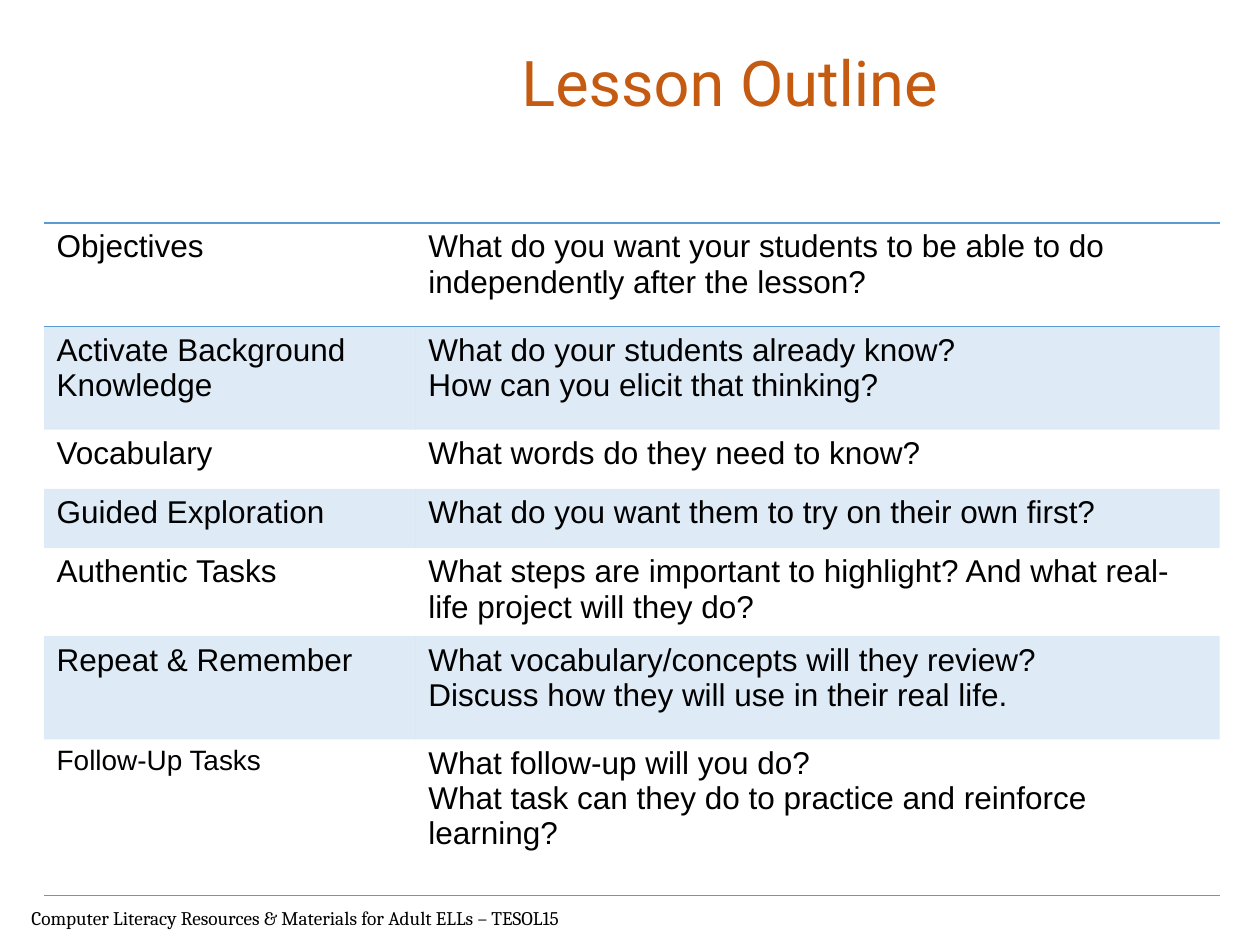
from lxml import etree
from pptx import Presentation
from pptx import util as u
from pptx.dml.color import RGBColor
from pptx.enum import text
from pptx.oxml.ns import qn

COLORS = {"title": "C55A11", "body": "000000", "accent": "5B9BD5"}
PLAIN_STYLE = "{2D5ABB26-0587-4C30-8999-92F81FD0307C}"
ROW_HEIGHTS = [0.82, 0.82, 0.47, 0.47, 0.66, 0.82, 1.24]
COLUMN_WIDTHS = [2.95, 6.38]
OUTLINE = [
    ("Objectives", "What do you want your students to be able to do independently after the lesson?"),
    ("Activate Background Knowledge", "What do your students already know?\nHow can you elicit that thinking?"),
    ("Vocabulary", "What words do they need to know?"),
    ("Guided Exploration", "What do you want them to try on their own first?"),
    ("Authentic Tasks", "What steps are important to highlight? And what real-life project will they do?"),
    ("Repeat & Remember", "What vocabulary/concepts will they review?\nDiscuss how they will use in their real life."),
    ("Follow-Up Tasks", "What follow-up will you do?\nWhat task can they do to practice and reinforce learning?"),
]


class LessonSlide:
    def __init__(self, slide):
        self.slide = slide

    def fill_text(self, frame, words, font, size, color, align=text.PP_ALIGN.LEFT):
        frame.text = words
        for paragraph in frame.paragraphs:
            paragraph.alignment = align
            for run in paragraph.runs:
                run.font.name = font
                run.font.size = u.Pt(size)
                run.font.color.rgb = RGBColor.from_string(COLORS[color])

    def label(self, box, words, font, size, color,
              align=text.PP_ALIGN.LEFT, anchor=text.MSO_ANCHOR.TOP):
        frame = self.slide.shapes.add_textbox(*map(u.Inches, box)).text_frame
        frame.word_wrap = True
        frame.vertical_anchor = anchor
        self.fill_text(frame, words, font, size, color, align)

    def tint(self, cell):
        cell.fill.solid()
        cell.fill.fore_color.rgb = RGBColor.from_string(COLORS["accent"])
        shade = cell._tc.tcPr.find(".//" + qn("a:srgbClr"))
        etree.SubElement(shade, qn("a:alpha"), val="20000")

    def rule(self, cell, edges):
        for position, edge in enumerate(edges):
            line = etree.Element(qn(f"a:ln{edge}"), w=str(u.Pt(1)))
            fill = etree.SubElement(line, qn("a:solidFill"))
            etree.SubElement(fill, qn("a:srgbClr"), val=COLORS["accent"])
            cell._tc.get_or_add_tcPr().insert(position, line)

    def table(self, left, top, rows, widths, heights):
        box = map(u.Inches, (left, top, sum(widths), sum(heights)))
        table = self.slide.shapes.add_table(len(rows), len(widths), *box).table
        table.first_row = table.horz_banding = False
        table._tbl.tblPr.find(qn("a:tableStyleId")).text = PLAIN_STYLE
        for column, width in zip(table.columns, widths):
            column.width = u.Inches(width)
        edges = {0: "TB", len(rows) - 1: "B"}
        for r, (words, height) in enumerate(zip(rows, heights)):
            table.rows[r].height = u.Inches(height)
            for c, content in enumerate(words):
                cell = table.cell(r, c)
                size = 16 if content == "Follow-Up Tasks" else 18
                self.fill_text(cell.text_frame, content, "Arial", size, "body")
                if r % 2:
                    self.tint(cell)
                else:
                    cell.fill.background()
                self.rule(cell, edges.get(r, ""))


def main():
    deck = Presentation()
    deck.slide_width, deck.slide_height = u.Inches(10), u.Inches(7.5)
    lesson = LessonSlide(deck.slides.add_slide(deck.slide_layouts[6]))
    lesson.label((2.08, 0.02, 7.42, 1.25), "Lesson Outline", "Roboto", 36, "title",
                 text.PP_ALIGN.CENTER, text.MSO_ANCHOR.MIDDLE)
    lesson.table(0.35, 1.77, OUTLINE, COLUMN_WIDTHS, ROW_HEIGHTS)
    lesson.label((0.15, 7.14, 4.7, 0.35),
                 "Computer Literacy Resources & Materials for Adult ELLs – TESOL15",
                 "Cambria", 11, "body")
    deck.save("out.pptx")


if __name__ == "__main__":
    main()
